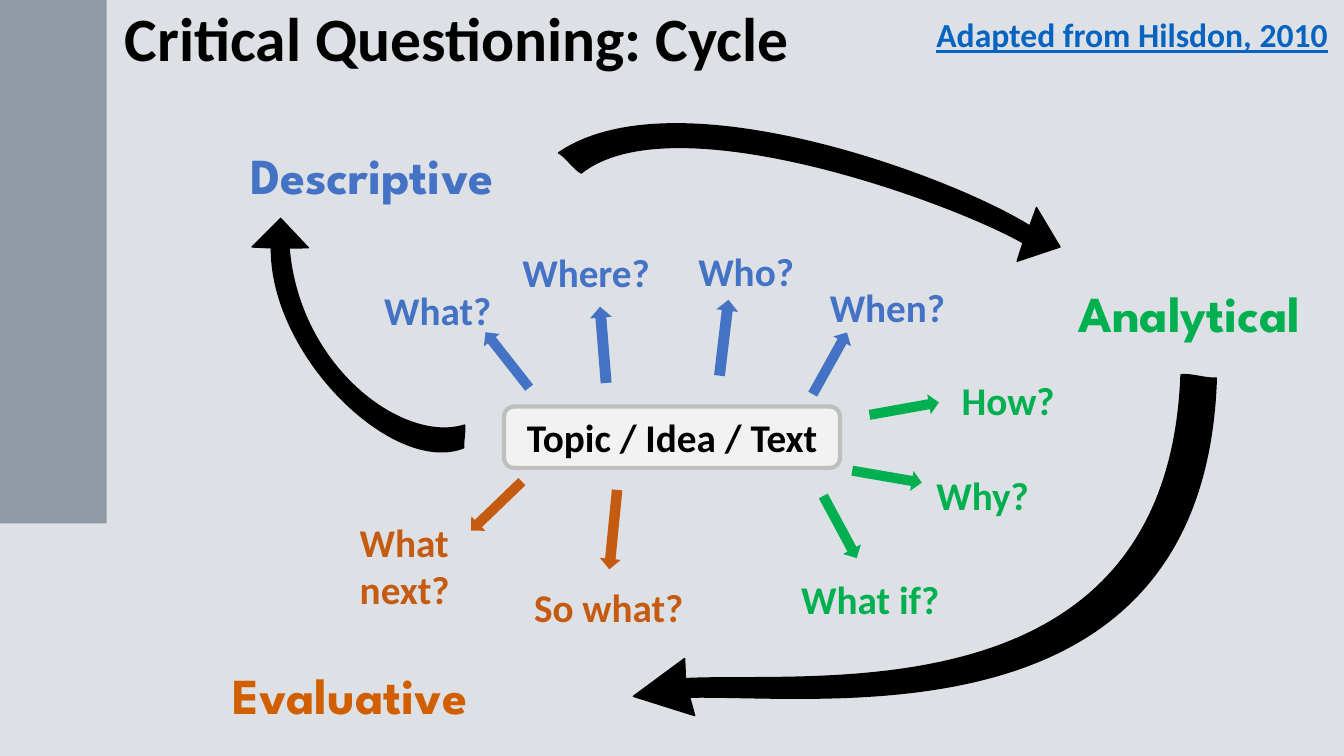
import math

from lxml import etree
from pptx import Presentation
from pptx import util as u
from pptx.dml.color import RGBColor
from pptx.enum import shapes, text
from pptx.oxml import ns

COLUMNS, ROWS = 160, 90
CELL = u.Inches(7.5) / ROWS
COLOURS = {
    "slate": "8F9AA6", "black": "000000", "link": "0563C1",
    "topic": "F2F2F2", "topic edge": "BFBFBF", "descriptive": "4472C4",
    "analytical": "00B050", "evaluative": "C55A11", "evaluative heading": "D15F00",
}
HEADINGS = [
    ("Descriptive", (27.6, 15.35, 33.35, 7.3), "descriptive"),
    ("Analytical", (126.1, 31.75, 31, 7.3), "analytical"),
    ("Evaluative", (24.8, 77.15, 33.7, 7.3), "evaluative heading"),
]
# Each question: wording, left, top, width.
QUESTIONS = {
    "descriptive": [("What?", 44.55, 30.7, 16), ("Where?", 61, 26.15, 18.8),
                    ("Who?", 81.95, 26, 14.8), ("When?", 97.6, 30.35, 17.9)],
    "analytical": [("How?", 113.3, 41.4, 14.8), ("Why?", 110.3, 52.75, 13.6),
                   ("What if?", 94.2, 65.15, 19.1)],
    "evaluative": [("So what?", 62.4, 66, 21.1)],
}
# Each pointer: centre column, centre row, length, thickness, angle.
POINTERS = {
    "descriptive": [(60.4, 42.85, 8.4, 2.4, 231.8), (71.8, 41.05, 9.1, 2.6, 265.4),
                    (86.2, 40.2, 9.1, 2.6, 276.8), (98.8, 43.25, 8.4, 2.4, 299.1)],
    "analytical": [(107.65, 48.65, 8.4, 2.4, 349.8), (105.6, 56.75, 8.4, 2.4, 9.8),
                   (100, 62.75, 8.4, 2.4, 61.7)],
    "evaluative": [(59.1, 60.25, 8.4, 2.4, 136.1), (73, 63.05, 9.5, 2.5, 95.6)],
}
# Each cycle arrow: frame, angle, start, outer curve, head corners, inner curve, tail.
CYCLE_ARROWS = [
    ((29.5, 26.5, 26.4, 26.9), 182.8, (55.2, 53.3),
     [(46.9, 56.6), (32.2, 42.4), (32.3, 29.5)],
     [(30, 29.4), (33.4, 26), (36.7, 29.5), (34.4, 29.5)],
     [(35.6, 43.9), (48.1, 52.9), (55.3, 50.6)],
     [(55.4, 51.5), (55.1, 52.6), (55.2, 53.3)]),
    ((88.4, -6.8, 16.7, 59.5), 292.2, (66.5, 18.2),
     [(80.2, 8.8), (113, 20.9), (122.6, 26.9)],
     [(123.4, 24.7), (126.2, 29.4), (121.1, 31.1), (121.8, 28.9)],
     [(112.8, 23.8), (80, 12), (69.2, 20.6)],
     [(68.4, 20.2), (67.3, 18.6), (66.5, 18.2)]),
    ((93.8, 28.6, 33, 74), 82.1, (144.8, 45),
     [(143.4, 88.7), (99, 82.7), (82.1, 83)],
     [(82.7, 85.2), (75.4, 82.9), (81.5, 78.4), (81.6, 80.8)],
     [(97.3, 80), (139.1, 85.4), (140.6, 44.6)],
     [(142.1, 44.5), (143.4, 45.1), (144.8, 45)]),
]


def cells(*lengths):
    return [round(length * CELL) for length in lengths]


def colour(name):
    return RGBColor.from_string(COLOURS[name])


def write(box, wording, *, size=28, tint="black", font="Calibri", align="LEFT",
          anchor="TOP", spacing=1.0, inset=None, underline=False):
    frame = box.text_frame
    frame.word_wrap = True
    frame.auto_size = text.MSO_AUTO_SIZE.NONE
    frame.vertical_anchor = text.MSO_ANCHOR[anchor]
    if inset is not None:
        frame.margin_left = frame.margin_right = u.Inches(inset)
        frame.margin_top = frame.margin_bottom = u.Inches(inset)
    para = frame.paragraphs[0]
    para.alignment = text.PP_ALIGN[align]
    para.line_spacing = spacing
    span = para.add_run()
    span.text = wording
    span.font.name, span.font.size, span.font.bold = font, u.Pt(size), True
    span.font.underline = underline
    span.font.color.rgb = colour(tint)


def paint(shape, fill, edge=None, edge_width=1):
    shape.shadow.inherit = False
    shape.fill.solid()
    shape.fill.fore_color.rgb = colour(fill)
    if edge:
        shape.line.color.rgb = colour(edge)
        shape.line.width = u.Pt(edge_width)
    else:
        shape.line.fill.background()


def add_label(page, wording, place, **style):
    write(page.shapes.add_textbox(*cells(*place)), wording, **style)


def add_panel(page, kind, place, *look):
    panel = page.shapes.add_shape(shapes.MSO_SHAPE[kind], *cells(*place))
    paint(panel, *look)
    return panel


def add_backdrop(deck, page):
    """Put the pale wash and the sidebar on the slide master."""
    wash = add_panel(page, "RECTANGLE", (0, 0, COLUMNS, ROWS), "slate")
    tone = wash.element.spPr.find(".//" + ns.qn("a:srgbClr"))
    etree.SubElement(tone, ns.qn("a:alpha"), val="30000")
    sidebar = add_panel(page, "RECTANGLE", (0, 0, 12.7, 62.3), "slate")
    lowest = deck.slide_master.shapes[0].element
    for panel in (wash, sidebar):
        lowest.addprevious(panel.element)


def add_pointer(page, column, row, length, thickness, angle, fill):
    place = (column - length / 2, row - thickness / 2, length, thickness)
    add_panel(page, "RIGHT_ARROW", place, fill).rotation = angle


def turn_back(point, frame, angle):
    """Return a slide point as a point inside the frame before its rotation."""
    left, top, width, height = frame
    across, down = point[0] - left - width / 2, point[1] - top - height / 2
    cosine, sine = math.cos(math.radians(angle)), math.sin(math.radians(angle))
    return cells(across * cosine + down * sine + width / 2,
                 down * cosine - across * sine + height / 2)


def add_cycle_arrow(page, frame, angle, start, outer, head, inner, tail):
    left, top, width, height = frame
    corners = [(left + width, top), (left + width, top + height), (left, top + height)]
    builder = page.shapes.build_freeform(*cells(left, top))
    builder.add_line_segments([cells(*corner) for corner in corners])
    arrow = builder.convert_to_shape()
    paint(arrow, "black", "black")
    arrow.rotation = angle

    outline = arrow.element.spPr.find(".//" + ns.qn("a:path"))
    for step in list(outline):
        outline.remove(step)
    steps = [("moveTo", [start]), ("cubicBezTo", outer),
             *[("lnTo", [corner]) for corner in head],
             ("cubicBezTo", inner), ("cubicBezTo", tail), ("close", [])]
    for name, points in steps:
        step = etree.SubElement(outline, ns.qn("a:" + name))
        for point in points:
            x, y = turn_back(point, frame, angle)
            etree.SubElement(step, ns.qn("a:pt"), x=str(x), y=str(y))


def main():
    deck = Presentation()
    deck.slide_width, deck.slide_height = cells(COLUMNS, ROWS)
    page = deck.slides.add_slide(deck.slide_layouts[5])
    add_backdrop(deck, page)

    for wording, place, tint in HEADINGS:
        add_label(page, wording, place, size=36, tint=tint, font="League Spartan",
                  align="CENTER", anchor="MIDDLE", spacing=1.5, inset=0.04)
    title = page.shapes.title
    title.left, title.top, title.width, title.height = cells(13.65, 0.5, 88.2, 9)
    write(title, "Critical Questioning: Cycle", size=44, anchor="MIDDLE", spacing=0.9)
    add_label(page, "Adapted from Hilsdon, 2010", (110.3, 1.1, 51.6, 6),
              size=24, tint="link", underline=True)
    topic = add_panel(page, "ROUNDED_RECTANGLE", (60, 48.4, 40, 7.3),
                      "topic", "topic edge", 3)
    write(topic, "Topic / Idea / Text", align="CENTER", anchor="MIDDLE")

    for arrow in CYCLE_ARROWS:
        add_cycle_arrow(page, *arrow)
    add_label(page, "What next?", (41.65, 61.1, 15.8, 12.5), tint="evaluative")
    for stage, questions in QUESTIONS.items():
        for wording, left, top, width in questions:
            add_label(page, wording, (left, top, width, 8.8), tint=stage, spacing=1.5)
        for pointer in POINTERS[stage]:
            add_pointer(page, *pointer, stage)
    deck.save("out.pptx")


if __name__ == "__main__":
    main()
